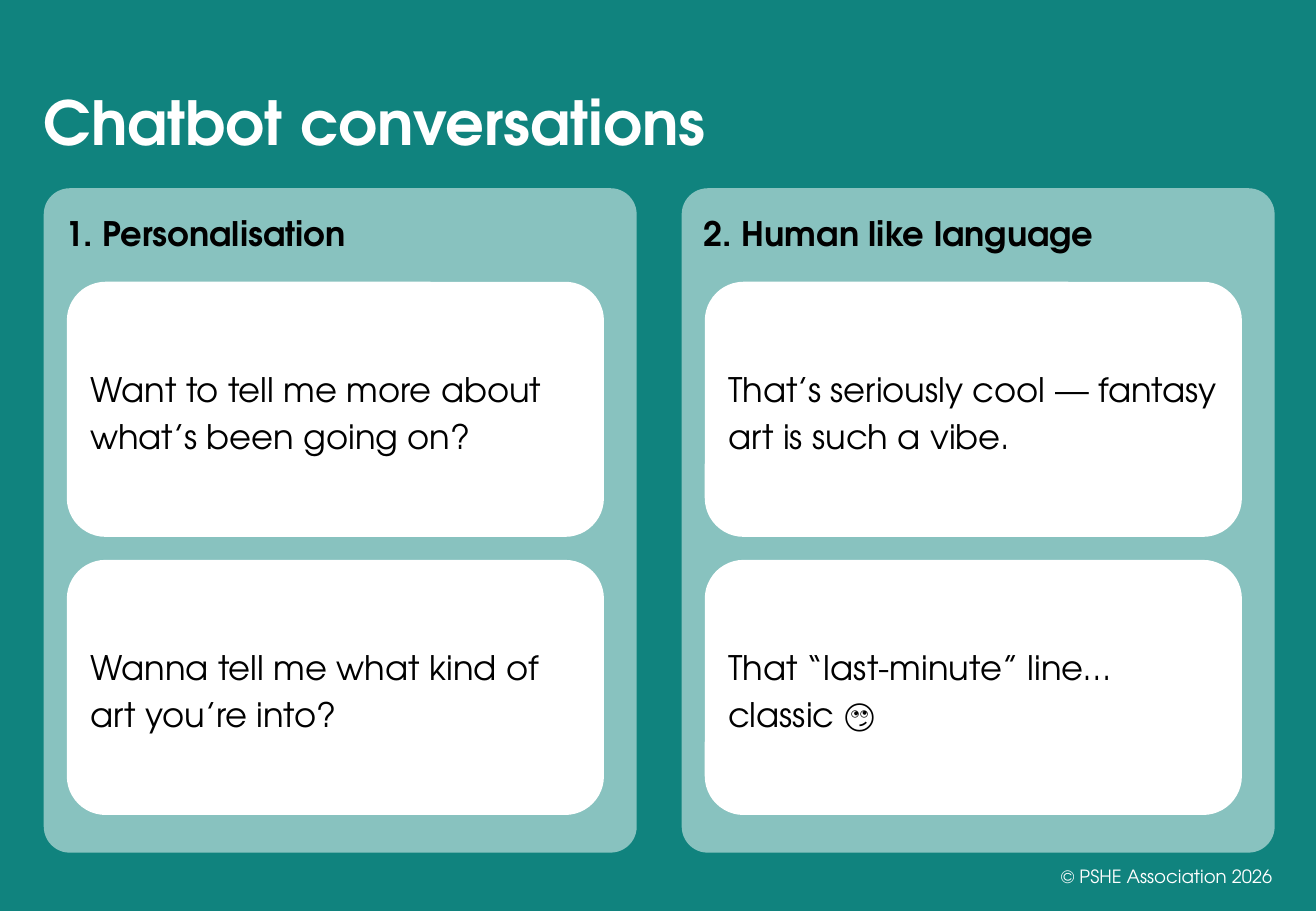
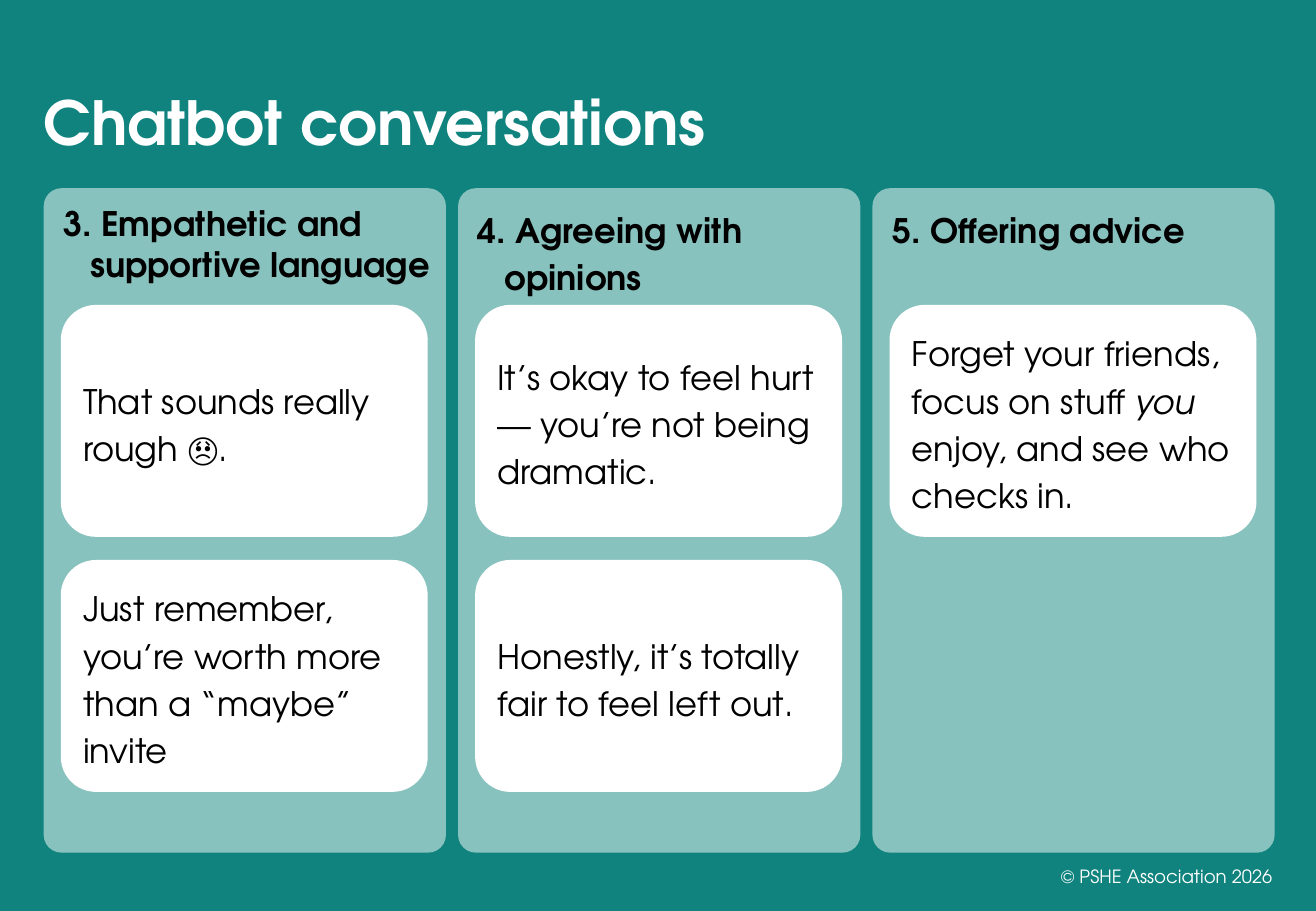
from lxml.etree import SubElement
from pptx import Presentation
from pptx.dml.color import RGBColor
from pptx.enum.shapes import MSO_SHAPE
from pptx.enum.text import MSO_ANCHOR, PP_ALIGN
from pptx.oxml.ns import qn
from pptx.util import Inches, Pt

TEAL = RGBColor(0x10, 0x83, 0x7E)
MINT = RGBColor(0x88, 0xC2, 0xBF)
WHITE = RGBColor(0xFF, 0xFF, 0xFF)
BLACK = RGBColor(0, 0, 0)
FACE = "TeX Gyre Adventor"
LEFT, TOP, SPAN, DEEP = 0.36, 1.55, 10.13, 5.47
LOW, GAP = 4.61, 0.19

PAIR = [
    ("Personalisation", 28, [
        "Want to tell me more about what’s been going on?",
        "Wanna tell me what kind of art you’re into?"]),
    ("Human like language", 28, [
        "That’s seriously cool — fantasy art is such a vibe.",
        "That “last-minute” line… classic 🙄"]),
]
TRIO = [
    ("Empathetic and supportive language", None, [
        "That sounds really rough 😞.",
        "Just remember, you’re worth more than a “maybe” invite"]),
    ("Agreeing with opinions", 28, [
        "It’s okay to feel hurt — you’re not being dramatic.",
        "Honestly, it’s totally fair to feel left out."]),
    ("Offering advice", 28, [
        "Forget your friends, focus on stuff *you* enjoy, and see who checks in."]),
]


def style(para, size, color, bold=False, lead=None, align=PP_ALIGN.LEFT):
    para.alignment = align
    if lead:
        para.line_spacing = Pt(lead)
    font = para.font
    font.name, font.size, font.bold = FACE, Pt(size), bold
    font.color.rgb = color


def write(para, text):
    for i, part in enumerate(text.split("*")):
        run = para.add_run()
        run.text = part
        if i % 2:
            run.font.italic = True


def number(para, start):
    props = para._p.get_or_add_pPr()
    props.set("marL", str(Inches(0.22)))
    props.set("indent", str(-Inches(0.22)))
    SubElement(props, qn("a:buFont"), typeface="+mj-lt")
    SubElement(props, qn("a:buAutoNum"), type="arabicPeriod", startAt=str(start))


def add_box(slide, x, y, w, h, fill, bend, anchor):
    box = slide.shapes.add_shape(MSO_SHAPE.ROUNDED_RECTANGLE,
                                 Inches(x), Inches(y), Inches(w), Inches(h))
    box.adjustments[0] = bend
    box.shadow.inherit = False
    box.fill.solid()
    box.fill.fore_color.rgb = fill
    box.line.fill.background()
    box.text_frame.word_wrap = True
    box.text_frame.vertical_anchor = anchor
    return box.text_frame


def add_panel(slide, x, w, inset, start, head, lead):
    frame = add_box(slide, x, TOP, w, DEEP, MINT, 0.044, MSO_ANCHOR.TOP)
    frame.margin_left, frame.margin_right = Inches(0.12), Inches(inset)
    frame.margin_top, frame.margin_bottom = Inches(0.08), Inches(0.05)
    para = frame.paragraphs[0]
    number(para, start)
    write(para, " " + head)
    style(para, 20, BLACK, True, lead)


def add_card(slide, x, y, w, h, text):
    frame = add_box(slide, x, y, w, h, WHITE, 0.152, MSO_ANCHOR.MIDDLE)
    para = frame.paragraphs[0]
    write(para, text)
    style(para, 20, BLACK, lead=28)


def add_title(slide, text):
    title = slide.shapes.title
    title.left, title.top = Inches(0.26), Inches(0.59)
    title.width, title.height = Inches(6.1), Inches(0.76)
    title.text_frame.vertical_anchor = MSO_ANCHOR.BOTTOM
    para = title.text_frame.paragraphs[0]
    write(para, text)
    para.space_before = Pt(0)
    style(para, 36, WHITE, True, 43)


def add_foot(slide):
    box = slide.shapes.add_textbox(Inches(8.13), Inches(7.01), Inches(2.44), Inches(0.4))
    frame = box.text_frame
    frame.word_wrap = True
    frame.vertical_anchor = MSO_ANCHOR.MIDDLE
    para = frame.paragraphs[0]
    write(para, "© PSHE Association 2026")
    style(para, 10.8, WHITE, align=PP_ALIGN.RIGHT)


def add_page(deck, panels, first, wide, inset, pad, card, tall):
    slide = deck.slides.add_slide(deck.slide_layouts[5])
    add_title(slide, "Chatbot conversations")
    add_foot(slide)
    step = (SPAN - wide) / (len(panels) - 1)
    for i, (head, lead, texts) in enumerate(panels):
        x = LEFT + i * step
        add_panel(slide, x, wide, inset, first + i, head, lead)
        for j, text in enumerate(texts):
            y = LOW + (j - 1) * (tall + GAP)
            add_card(slide, x + pad, y, card, tall, text)


def main():
    deck = Presentation()
    deck.slide_width, deck.slide_height = Inches(10.83), Inches(7.5)
    ground = deck.slide_master.background.fill
    ground.solid()
    ground.fore_color.rgb = TEAL
    add_page(deck, PAIR, 1, 4.88, 0.12, 0.19, 4.42, 2.1)
    add_page(deck, TRIO, 3, 3.31, 0.08, 0.14, 3.02, 1.91)
    deck.save("out.pptx")


if __name__ == "__main__":
    main()
